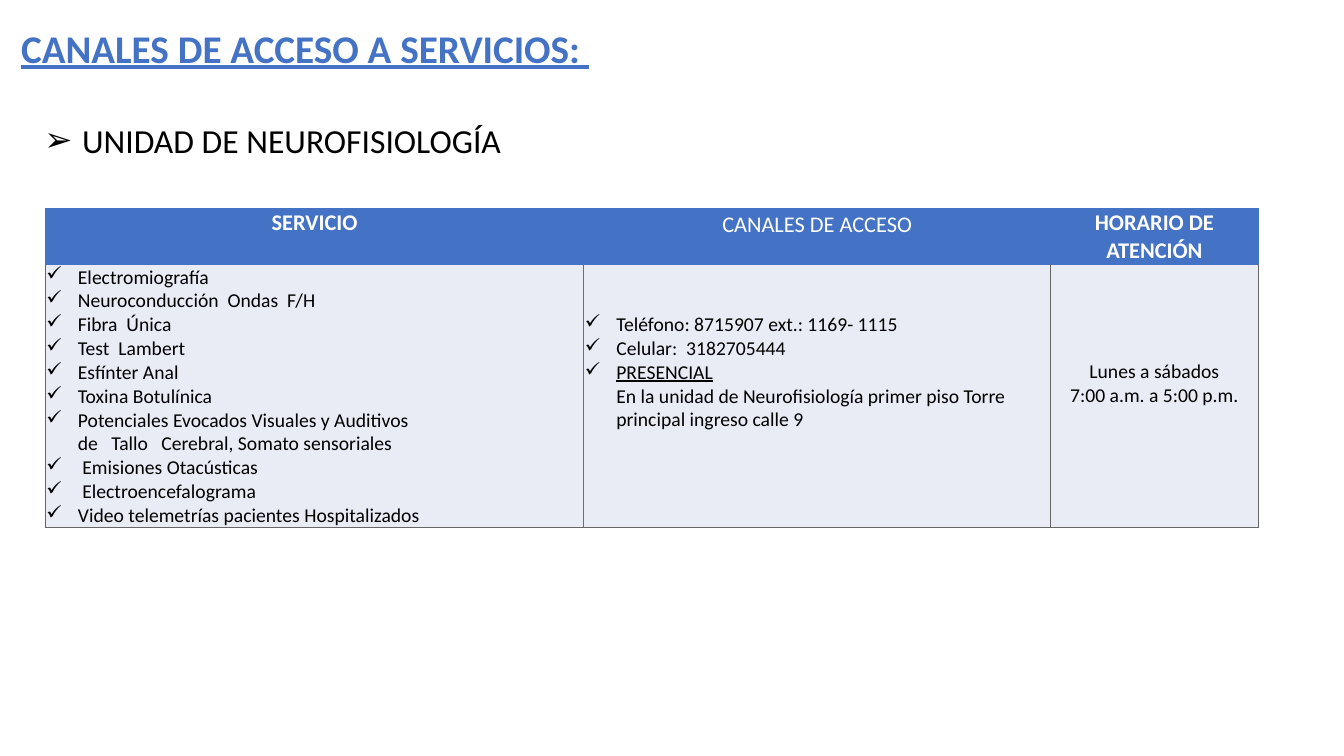
from dataclasses import dataclass
from typing import Optional

from lxml.etree import SubElement
from pptx import Presentation
from pptx.dml.color import RGBColor
from pptx.enum.text import MSO_ANCHOR, MSO_AUTO_SIZE, PP_ALIGN
from pptx.oxml.ns import qn
from pptx.util import Inches, Length, Pt


@dataclass(frozen=True)
class Theme:
    font: str = "Calibri"
    blue: str = "4472C4"
    pale: str = "E9EBF5"
    gray: str = "666666"
    black: str = "000000"
    white: str = "FFFFFF"
    title_size: int = 28
    subtitle_size: int = 24
    header_size: int = 16
    body_size: int = 14


@dataclass(frozen=True)
class Area:
    left: float
    top: float
    width: float
    height: float


@dataclass(frozen=True)
class Column:
    header: str
    items: tuple[str, ...]
    width: float
    top_inset: float = 0.13
    bullet: Optional[str] = "✓"
    align: PP_ALIGN = PP_ALIGN.LEFT
    header_bold: bool = True
    header_spacing: float = 1
    header_after: int = 0
    underlined: str = ""


THEME = Theme()
SLIDE_WIDTH = Inches(13.33)
SLIDE_HEIGHT = Inches(7.5)
TITLE_AREA = Area(0.83, 1.73, 68.64, 8.4)
SUBTITLE_AREA = Area(2.55, 15.2, 39.16, 10.8)
TABLE_AREA = Area(3.38, 27.6, 90.25, 41.67)
ROW_HEIGHTS = (7.33, 34.34)
CELL_INSET = 0.08
LIST_INDENT = 2.34
SUBTITLE_INDENT = 2.81

COLUMNS = (
    Column("SERVICIO", (
        "Electromiografía",
        "Neuroconducción  Ondas  F/H",
        "Fibra  Única",
        "Test  Lambert",
        "Esfínter Anal",
        "Toxina Botulínica",
        "Potenciales Evocados Visuales y Auditivos\nde   Tallo   Cerebral, Somato sensoriales",
        " Emisiones Otacústicas",
        " Electroencefalograma",
        "Video telemetrías pacientes Hospitalizados",
    ), width=40.06),
    Column("CANALES DE ACCESO", (
        "Teléfono: 8715907 ext.: 1169- 1115",
        "Celular:  3182705444",
        "PRESENCIAL\nEn la unidad de Neurofisiología primer piso Torre principal ingreso calle 9",
    ), width=34.73, top_inset=6.4, header_bold=False, header_spacing=1.07,
        header_after=8, underlined="PRESENCIAL"),
    Column("HORARIO DE ATENCIÓN", ("Lunes a sábados\n7:00 a.m. a 5:00 p.m.",),
           width=15.46, top_inset=12.67, bullet=None, align=PP_ALIGN.CENTER),
)


def across(share: float) -> Length:
    return Length(round(SLIDE_WIDTH * share / 100))


def down(share: float) -> Length:
    return Length(round(SLIDE_HEIGHT * share / 100))


def write(para, text: str, *, size: int, color: str, bold: bool = False,
          underlined: str = "", align: PP_ALIGN = PP_ALIGN.LEFT,
          spacing: float = 1, after: int = 0,
          bullet: Optional[str] = None, indent: float = 0) -> None:
    para.alignment = align
    para.line_spacing = spacing
    para.space_before = Pt(0)
    para.space_after = Pt(after)
    if bullet:
        properties = para._p.get_or_add_pPr()
        properties.set("marL", str(across(indent)))
        properties.set("indent", str(-across(indent)))
        SubElement(properties, qn("a:buChar"), char=bullet)
    for index, line in enumerate(text.split("\n")):
        if index:
            para.add_line_break()
        span = para.add_run()
        span.text = line
        span.font.name = THEME.font
        span.font.size = Pt(size)
        span.font.bold = bold
        span.font.underline = line == underlined
        span.font.color.rgb = RGBColor.from_string(color)
    for line_break in para._p.findall(qn("a:br")):
        SubElement(line_break, qn("a:rPr"), sz=str(size * 100))


def place(box, area: Area, anchor: MSO_ANCHOR) -> None:
    box.left, box.top = across(area.left), down(area.top)
    box.width, box.height = across(area.width), down(area.height)
    box.text_frame.word_wrap = True
    box.text_frame.auto_size = MSO_AUTO_SIZE.NONE
    box.text_frame.vertical_anchor = anchor


def draw_border(cell, side: str, color: str, width: float) -> None:
    line = SubElement(cell._tc.get_or_add_tcPr(), qn(f"a:{side}"), w=str(Pt(width)))
    fill = SubElement(line, qn("a:solidFill"))
    SubElement(fill, qn("a:srgbClr"), val=color)


def format_cell(cell, fill: str, top_inset: float, borders: dict) -> None:
    cell.margin_left = cell.margin_right = across(CELL_INSET)
    cell.margin_top, cell.margin_bottom = down(top_inset), 0
    cell.vertical_anchor = MSO_ANCHOR.TOP
    for side, (color, width) in borders.items():
        draw_border(cell, side, color, width)
    cell.fill.solid()
    cell.fill.fore_color.rgb = RGBColor.from_string(fill)


def draw_table(page) -> None:
    table = page.shapes.add_table(
        len(ROW_HEIGHTS), len(COLUMNS), across(TABLE_AREA.left), down(TABLE_AREA.top),
        across(TABLE_AREA.width), down(TABLE_AREA.height)).table
    for row, height in zip(table.rows, ROW_HEIGHTS):
        row.height = down(height)
    blue, gray = (THEME.blue, 1), (THEME.gray, 0.5)
    for index, column in enumerate(COLUMNS):
        table.columns[index].width = across(column.width)
        header, body = table.cell(0, index), table.cell(1, index)
        format_cell(header, THEME.blue, 0.13,
                    dict.fromkeys(("lnL", "lnR", "lnT", "lnB"), blue))
        write(header.text_frame.paragraphs[0], column.header, size=THEME.header_size,
              color=THEME.white, bold=column.header_bold, align=PP_ALIGN.CENTER,
              spacing=column.header_spacing, after=column.header_after)
        format_cell(body, THEME.pale, column.top_inset, {
            "lnL": blue if index == 1 else gray,
            "lnR": blue if index == 0 else gray,
            "lnT": blue,
            "lnB": gray,
        })
        for position, item in enumerate(column.items):
            frame = body.text_frame
            para = frame.add_paragraph() if position else frame.paragraphs[0]
            write(para, item, size=THEME.body_size, color=THEME.black,
                  underlined=column.underlined, align=column.align,
                  bullet=column.bullet, indent=LIST_INDENT)


def main() -> None:
    deck = Presentation()
    deck.slide_width, deck.slide_height = SLIDE_WIDTH, SLIDE_HEIGHT
    page = deck.slides.add_slide(deck.slide_layouts.get_by_name("Title and Content"))
    title, subtitle = page.placeholders
    place(title, TITLE_AREA, MSO_ANCHOR.BOTTOM)
    heading = "CANALES DE ACCESO A SERVICIOS: "
    write(title.text_frame.paragraphs[0], heading, size=THEME.title_size,
          color=THEME.blue, bold=True, underlined=heading, spacing=0.9)
    place(subtitle, SUBTITLE_AREA, MSO_ANCHOR.TOP)
    write(subtitle.text_frame.paragraphs[0], "UNIDAD DE NEUROFISIOLOGÍA",
          size=THEME.subtitle_size, color=THEME.black, bullet="➢", indent=SUBTITLE_INDENT)
    draw_table(page)
    deck.save("out.pptx")


if __name__ == "__main__":
    main()
